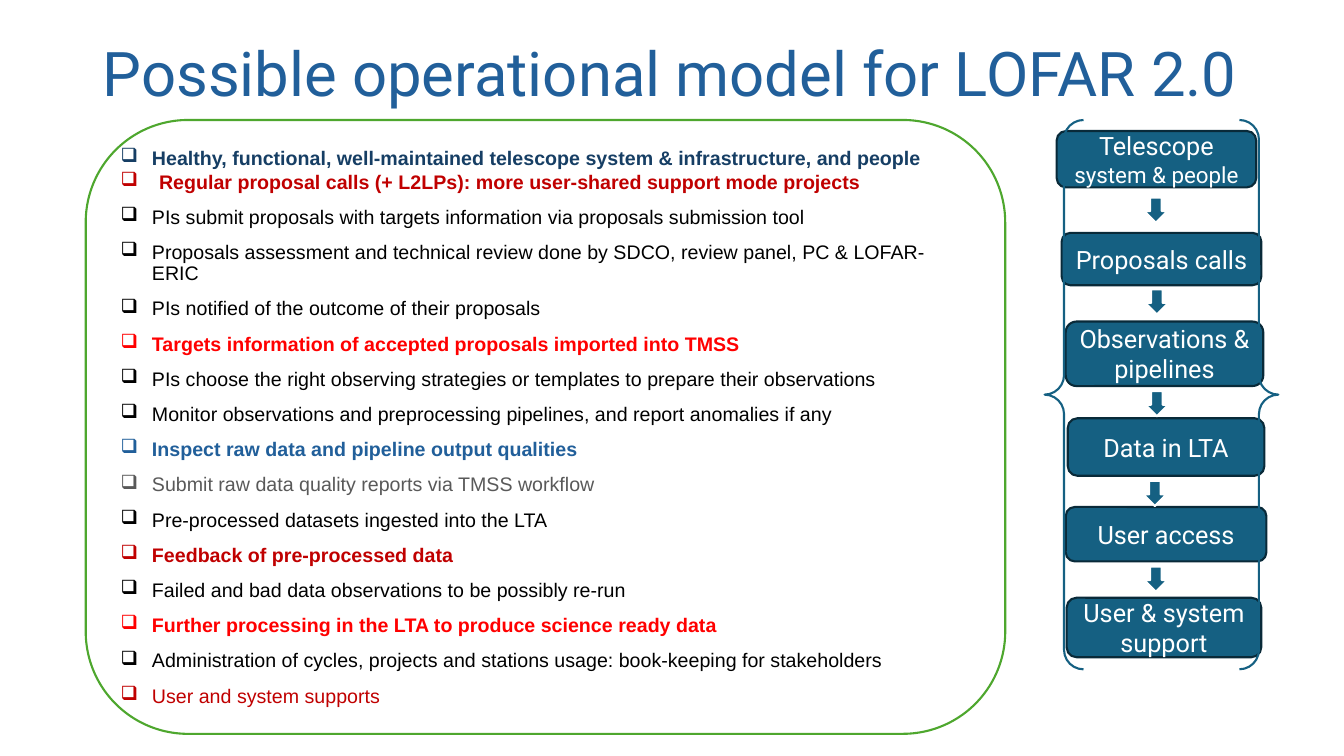
from dataclasses import dataclass

from lxml import etree
from pptx import Presentation
from pptx.dml.color import RGBColor
from pptx.enum.shapes import MSO_SHAPE
from pptx.enum.text import MSO_ANCHOR, PP_ALIGN
from pptx.oxml.ns import qn
from pptx.util import Inches, Pt

WHITE = RGBColor(0xFF, 0xFF, 0xFF)
BLACK = RGBColor(0x00, 0x00, 0x00)
GRAY = RGBColor(0x59, 0x59, 0x59)
NAVY = RGBColor(0x16, 0x3E, 0x64)
BLUE = RGBColor(0x21, 0x5F, 0x9A)
DARK_RED = RGBColor(0xC0, 0x00, 0x00)
RED = RGBColor(0xFF, 0x00, 0x00)
GREEN = RGBColor(0x4E, 0xA7, 0x2E)
TEAL = RGBColor(0x15, 0x60, 0x82)
DARK_TEAL = RGBColor(0x09, 0x2A, 0x39)


@dataclass
class Item:
    text: str
    color: RGBColor = BLACK
    bold: bool = False
    indent: float = 0.31
    spacing: float = 0.9
    before: float = 10


@dataclass
class Step:
    box: tuple[float, float, float, float]
    lines: list[tuple[str, float]]


ITEMS = [
    Item("Healthy, functional, well-maintained telescope system & infrastructure, and people",
         NAVY, True, spacing=1.0, before=0),
    Item("Regular proposal calls (+ L2LPs): more user-shared support mode projects",
         DARK_RED, True, indent=0.38, spacing=1.0, before=0),
    Item("PIs submit proposals with targets information via proposals submission tool"),
    Item("Proposals assessment and technical review done by SDCO, review panel, PC & LOFAR-ERIC"),
    Item("PIs notified of the outcome of their proposals"),
    Item("Targets information of accepted proposals imported into TMSS", RED, True),
    Item("PIs choose the right observing strategies or templates to prepare their observations"),
    Item("Monitor observations and preprocessing pipelines, and report anomalies if any"),
    Item("Inspect raw data and pipeline output qualities", BLUE, True),
    Item("Submit raw data quality reports via TMSS workflow", GRAY),
    Item("Pre-processed datasets ingested into the LTA"),
    Item("Feedback of pre-processed data", DARK_RED, True),
    Item("Failed and bad data observations to be possibly re-run"),
    Item("Further processing in the LTA to produce science ready data", RED, True),
    Item("Administration of cycles, projects and stations usage: book-keeping for stakeholders"),
    Item("User and system supports", DARK_RED),
]

STEPS = [
    Step((10.48, 1.3, 1.98, 0.56), [("Telescope ", 18), ("system & people", 16)]),
    Step((10.53, 2.31, 1.98, 0.52), [("Proposals calls", 18)]),
    Step((10.57, 3.19, 1.96, 0.64), [("Observations & pipelines", 18)]),
    Step((10.59, 4.15, 1.95, 0.57), [("Data in LTA", 18)]),
    Step((10.57, 5.03, 1.99, 0.54), [("User access", 18)]),
    Step((10.58, 5.93, 1.93, 0.59), [("User & system support", 18)]),
]

ARROWS = [(11.35, 1.96), (11.36, 2.87), (11.36, 3.88), (11.34, 4.77), (11.35, 5.62)]


def add_run(p, text: str, *, size: float, color: RGBColor,
            font: str = "Roboto", bold: bool = False) -> None:
    r = p.add_run()
    r.text = text
    r.font.name = font
    r.font.size = Pt(size)
    r.font.bold = bold
    r.font.color.rgb = color


def add_shape(s, kind: MSO_SHAPE, box: tuple[float, float, float, float],
              fill: RGBColor | None, line: RGBColor):
    sp = s.shapes.add_shape(kind, *(Inches(v) for v in box))
    sp.shadow.inherit = False
    if fill is None:
        sp.fill.background()
    else:
        sp.fill.solid()
        sp.fill.fore_color.rgb = fill
    sp.line.color.rgb = line
    sp.line.width = Pt(1.5)
    return sp


def add_bullet(p, indent: float) -> None:
    props = p._p.get_or_add_pPr()
    props.set("marL", str(Inches(indent)))
    props.set("indent", str(-Inches(indent)))
    etree.SubElement(props, qn("a:buChar")).set("char", "❑")


def draw_title(s) -> None:
    sp = s.shapes.add_textbox(Inches(0.92), Inches(0.19), Inches(11.5), Inches(1.13))
    tf = sp.text_frame
    tf.word_wrap = True
    tf.vertical_anchor = MSO_ANCHOR.MIDDLE
    p = tf.paragraphs[0]
    p.line_spacing = 0.9
    add_run(p, "Possible operational model for LOFAR 2.0", size=44, color=BLUE)


def draw_checklist(s) -> None:
    sp = add_shape(s, MSO_SHAPE.ROUNDED_RECTANGLE, (0.85, 1.19, 9.12, 6.09), WHITE, GREEN)
    tf = sp.text_frame
    tf.word_wrap = True
    tf.vertical_anchor = MSO_ANCHOR.MIDDLE
    tf.margin_left = tf.margin_right = tf.margin_top = tf.margin_bottom = Inches(0.05)
    for i, item in enumerate(ITEMS):
        p = tf.add_paragraph() if i else tf.paragraphs[0]
        add_bullet(p, item.indent)
        p.alignment = PP_ALIGN.LEFT
        p.line_spacing = item.spacing
        if item.before:
            p.space_before = Pt(item.before)
        add_run(p, item.text, size=14, color=item.color, font="Arial", bold=item.bold)


def draw_step(s, step: Step) -> None:
    sp = add_shape(s, MSO_SHAPE.ROUNDED_RECTANGLE, step.box, TEAL, DARK_TEAL)
    tf = sp.text_frame
    tf.word_wrap = True
    tf.vertical_anchor = MSO_ANCHOR.MIDDLE
    p = tf.paragraphs[0]
    p.alignment = PP_ALIGN.CENTER
    for text, size in step.lines:
        add_run(p, text, size=size, color=WHITE)


def main() -> None:
    prs = Presentation()
    prs.slide_width, prs.slide_height = Inches(13.33), Inches(7.5)
    s = prs.slides.add_slide(prs.slide_layouts[6])

    # Title and list of operations
    draw_title(s)
    draw_checklist(s)

    # Workflow column with arrows between the steps
    for step in STEPS:
        draw_step(s, step)
    for left, top in ARROWS:
        add_shape(s, MSO_SHAPE.DOWN_ARROW, (left, top, 0.23, 0.25), TEAL, WHITE)

    # Braces around the workflow
    add_shape(s, MSO_SHAPE.DOUBLE_BRACE, (10.36, 1.19, 2.32, 5.45), None, TEAL)

    prs.save("out.pptx")


if __name__ == "__main__":
    main()
